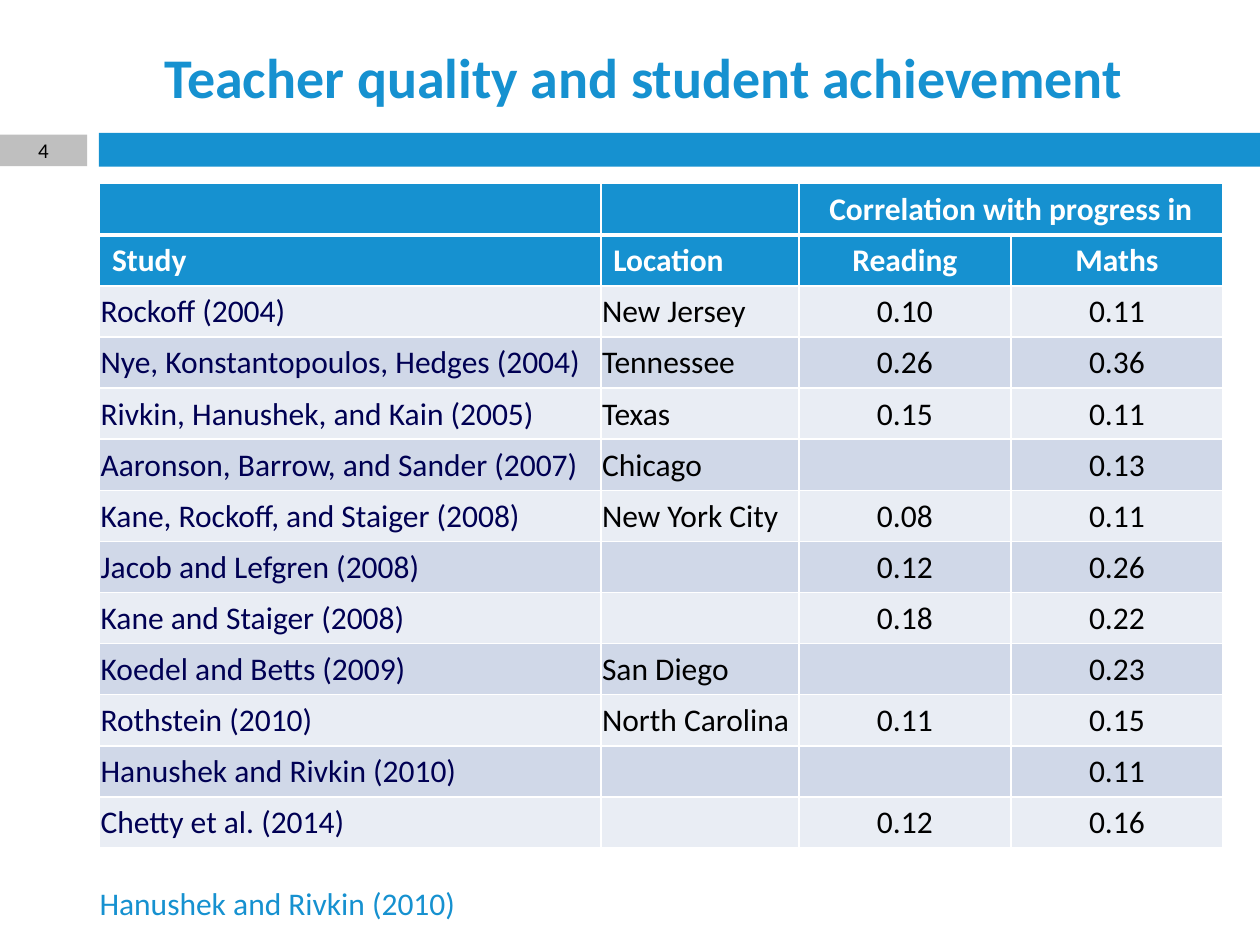
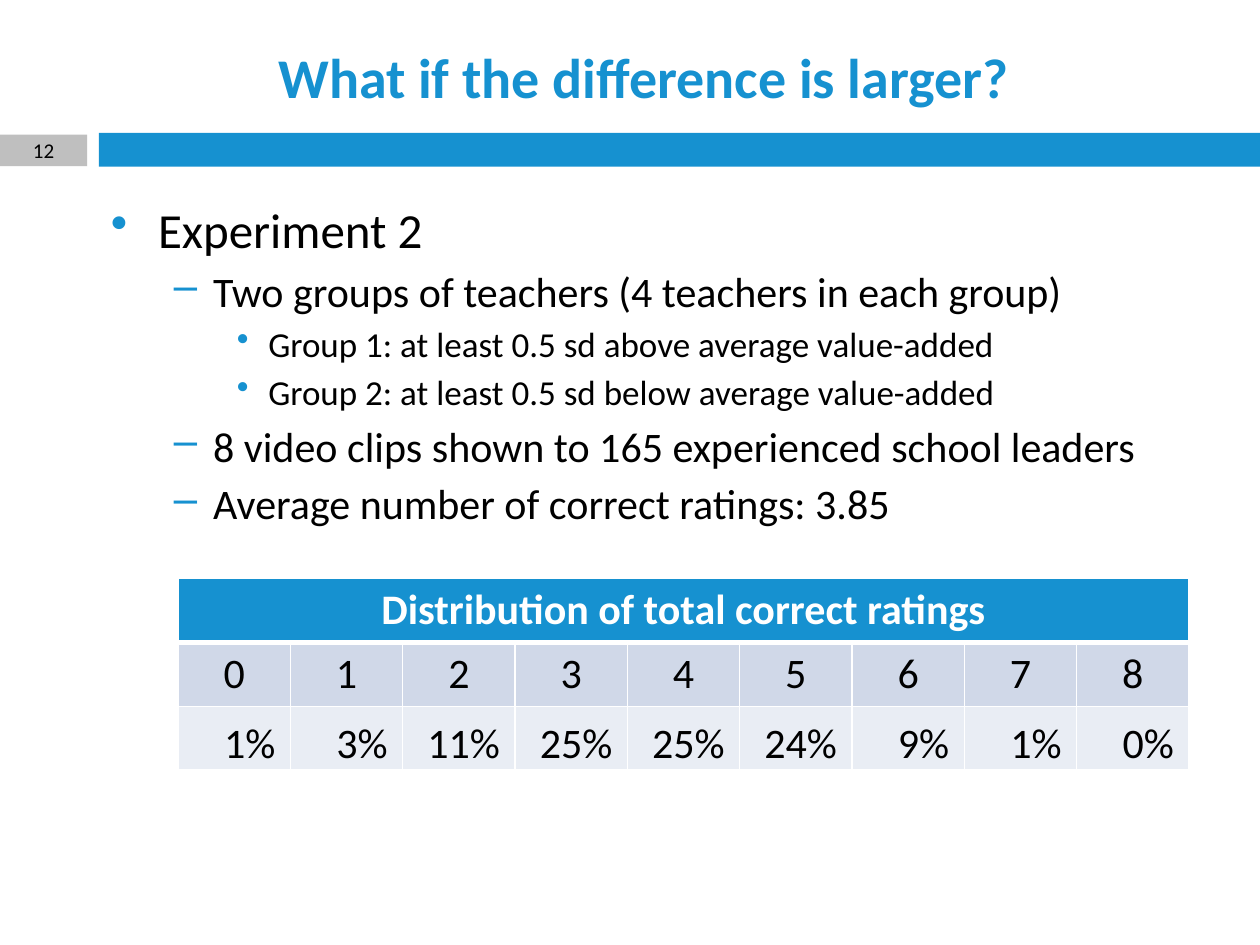
"""Build two slides on teacher quality: correlations with progress, and rating results."""
from dataclasses import dataclass

from lxml import etree
from pptx import Presentation
from pptx.dml.color import RGBColor
from pptx.enum import shapes, text
from pptx.oxml import ns
from pptx.util import Pt

LEFT, CENTER, RIGHT = text.PP_ALIGN.LEFT, text.PP_ALIGN.CENTER, text.PP_ALIGN.RIGHT
TOP, MIDDLE, BOTTOM = text.MSO_ANCHOR.TOP, text.MSO_ANCHOR.MIDDLE, text.MSO_ANCHOR.BOTTOM


@dataclass(frozen=True)
class Theme:
    font: str = "Calibri"
    accent: str = "1691D0"
    number_band: str = "BFBFBF"
    white: str = "FFFFFF"
    black: str = "000000"
    study: str = "000053"
    light_row: str = "E9EDF4"
    dark_row: str = "D0D8E8"
    title_size: int = 32
    number_size: int = 12
    study_size: int = 18
    rating_size: int = 24
    level_sizes: tuple = (28, 24, 20)


THEME = Theme()

STUDIES_TITLE = "Teacher quality and student achievement"
STUDY_HEADINGS = [
    ("", "", "Correlation with progress in", ""),
    ("Study", "Location", "Reading", "Maths"),
]
STUDIES = [
    ("Rockoff (2004)", "New Jersey", "0.10", "0.11"),
    ("Nye, Konstantopoulos, Hedges (2004)", "Tennessee", "0.26", "0.36"),
    ("Rivkin, Hanushek, and Kain (2005)", "Texas", "0.15", "0.11"),
    ("Aaronson, Barrow, and Sander (2007)", "Chicago", "", "0.13"),
    ("Kane, Rockoff, and Staiger (2008)", "New York City", "0.08", "0.11"),
    ("Jacob and Lefgren (2008)", "", "0.12", "0.26"),
    ("Kane and Staiger (2008)", "", "0.18", "0.22"),
    ("Koedel and Betts (2009)", "San Diego", "", "0.23"),
    ("Rothstein (2010)", "North Carolina", "0.11", "0.15"),
    ("Hanushek and Rivkin (2010)", "", "", "0.11"),
    ("Chetty et al. (2014)", "", "0.12", "0.16"),
]
STUDIES_SOURCE = "Hanushek and Rivkin (2010)"

EXPERIMENT_TITLE = "What if the difference is larger?"
EXPERIMENT_POINTS = [
    (0, "Experiment 2"),
    (1, "Two groups of teachers (4 teachers in each group)"),
    (2, "Group 1: at least 0.5 sd above average value-added"),
    (2, "Group 2: at least 0.5 sd below average value-added"),
    (1, "8 video clips shown to 165 experienced school leaders"),
    (1, "Average number of correct ratings: 3.85"),
]
RATINGS_HEADING = "Distribution of total correct ratings"
RATING_SHARES = ["1%", "3%", "11%", "25%", "25%", "24%", "9%", "1%", "0%"]

BULLETS = [("•", 27, 27), ("–", 58.5, 22.5), ("•", 90, 18)]
SPACE_BEFORE = 0.18
CONTENT_LEFT = 56.2
TITLE_BOX = (CONTENT_LEFT, 18.7, 623.5, 49)
ACCENT_BAND = (56.5, 76, 663.5, 19.2)
NUMBER_BAND = (0, 77, 49.8, 18)
POINTS_BOX = (CONTENT_LEFT, 110.2, 663.8, 224.6)
SOURCE_BOX = (49.8, 501.8, 224, 29)
STUDY_TABLE_TOP, STUDY_ROW = 105, 29.2
STUDY_COLUMNS = (286.5, 113.2, 121.2, 121.2)
RATING_TABLE_LEFT, RATING_TABLE_TOP = 101.8, 330.7
RATING_COLUMN, RATING_ROW = 64.2, 36.5


def points(values):
    return [Pt(value) for value in values]


def color(value):
    return RGBColor.from_string(value)


def write(paragraph, words, size, ink, bold=False, align=LEFT):
    paragraph.text = words
    paragraph.alignment = align
    for run in paragraph.runs:
        run.font.name = THEME.font
        run.font.size = Pt(size)
        run.font.bold = bold
        run.font.color.rgb = color(ink)


def add_text_box(slide, box, anchor=TOP):
    frame = slide.shapes.add_textbox(*points(box)).text_frame
    frame.word_wrap = True
    frame.vertical_anchor = anchor
    return frame


def add_band(slide, box, fill):
    shape = slide.shapes.add_shape(shapes.MSO_SHAPE.RECTANGLE, *points(box))
    shape.shadow.inherit = False
    shape.fill.solid()
    shape.fill.fore_color.rgb = color(fill)
    shape.line.fill.background()
    return shape


def add_slide(presentation, title, number):
    slide = presentation.slides.add_slide(presentation.slide_layouts[6])
    add_band(slide, ACCENT_BAND, THEME.accent)
    frame = add_band(slide, NUMBER_BAND, THEME.number_band).text_frame
    frame.vertical_anchor = MIDDLE
    frame.margin_top = frame.margin_bottom = 0
    write(frame.paragraphs[0], str(number), THEME.number_size, THEME.black, align=CENTER)
    frame = add_text_box(slide, TITLE_BOX, MIDDLE)
    write(frame.paragraphs[0], title, THEME.title_size, THEME.accent, True, CENTER)
    return slide


def add_bullet(paragraph, level):
    mark, indent, hanging = BULLETS[level]
    paragraph.level = level
    properties = paragraph._p.get_or_add_pPr()
    properties.set("marL", str(Pt(indent)))
    properties.set("indent", str(-Pt(hanging)))
    bullet_color = etree.SubElement(properties, ns.qn("a:buClr"))
    etree.SubElement(bullet_color, ns.qn("a:srgbClr"), val=THEME.accent)
    etree.SubElement(properties, ns.qn("a:buChar"), char=mark)


def add_borders(cell, top=1, bottom=1):
    properties = cell._tc.get_or_add_tcPr()
    widths = {"lnL": 1, "lnR": 1, "lnT": top, "lnB": bottom}
    for position, (side, width) in enumerate(widths.items()):
        line = etree.Element(ns.qn("a:" + side), w=str(Pt(width)))
        fill = etree.SubElement(line, ns.qn("a:solidFill"))
        etree.SubElement(fill, ns.qn("a:srgbClr"), val=THEME.white)
        properties.insert(position, line)


def add_table(slide, left, top, columns, row_height, row_fills):
    count = len(row_fills)
    box = points((left, top, sum(columns), row_height * count))
    table = slide.shapes.add_table(count, len(columns), *box).table
    for column, width in zip(table.columns, columns):
        column.width = Pt(width)
    for index, (row, fill) in enumerate(zip(table.rows, row_fills)):
        row.height = Pt(row_height)
        for cell in row.cells:
            cell.fill.solid()
            cell.fill.fore_color.rgb = color(fill)
            add_borders(cell, 3 if index == 1 else 1, 3 if index == 0 else 1)
    return table


def set_margins(cell, right=0.72):
    cell.margin_left = cell.margin_top = Pt(0.72)
    cell.margin_right, cell.margin_bottom = Pt(right), 0


def build_studies(presentation):
    slide = add_slide(presentation, STUDIES_TITLE, 4)
    header_count = len(STUDY_HEADINGS)
    stripes = [(THEME.light_row, THEME.dark_row)[i % 2] for i in range(len(STUDIES))]
    table = add_table(slide, CONTENT_LEFT + 0.6, STUDY_TABLE_TOP, STUDY_COLUMNS, STUDY_ROW,
                      [THEME.accent] * header_count + stripes)
    table.cell(0, 2).merge(table.cell(0, 3))
    for row, entries in enumerate(STUDY_HEADINGS + STUDIES):
        header = row < header_count
        for column, words in enumerate(entries):
            cell = table.cell(row, column)
            if cell.is_spanned:
                continue
            cell.vertical_anchor = MIDDLE
            if not header:
                set_margins(cell)
            body_ink = THEME.study if column == 0 else THEME.black
            write(cell.text_frame.paragraphs[0], words, THEME.study_size,
                  THEME.white if header else body_ink, header, CENTER if column > 1 else LEFT)
    source = add_text_box(slide, SOURCE_BOX)
    write(source.paragraphs[0], STUDIES_SOURCE, THEME.study_size, THEME.accent)


def build_experiment(presentation):
    slide = add_slide(presentation, EXPERIMENT_TITLE, 12)
    frame = add_text_box(slide, POINTS_BOX)
    for index, (level, words) in enumerate(EXPERIMENT_POINTS):
        paragraph = frame.add_paragraph() if index else frame.paragraphs[0]
        size = THEME.level_sizes[level]
        add_bullet(paragraph, level)
        paragraph.space_before = Pt(size * SPACE_BEFORE if index else 0)
        write(paragraph, words, size, THEME.black)

    count = len(RATING_SHARES)
    table = add_table(slide, RATING_TABLE_LEFT, RATING_TABLE_TOP, [RATING_COLUMN] * count,
                      RATING_ROW, [THEME.accent, THEME.dark_row, THEME.light_row])
    heading = table.cell(0, 0)
    heading.merge(table.cell(0, count - 1))
    write(heading.text_frame.paragraphs[0], RATINGS_HEADING, THEME.rating_size,
          THEME.white, True, CENTER)
    for score, share in enumerate(RATING_SHARES):
        write(table.cell(1, score).text_frame.paragraphs[0], str(score),
              THEME.rating_size, THEME.black, align=CENTER)
        cell = table.cell(2, score)
        cell.vertical_anchor = BOTTOM
        set_margins(cell, right=8.64)
        write(cell.text_frame.paragraphs[0], share, THEME.rating_size, THEME.black, align=RIGHT)


def main():
    presentation = Presentation()
    presentation.slide_width, presentation.slide_height = Pt(720), Pt(540)
    build_studies(presentation)
    build_experiment(presentation)
    presentation.save("out.pptx")


if __name__ == "__main__":
    main()
